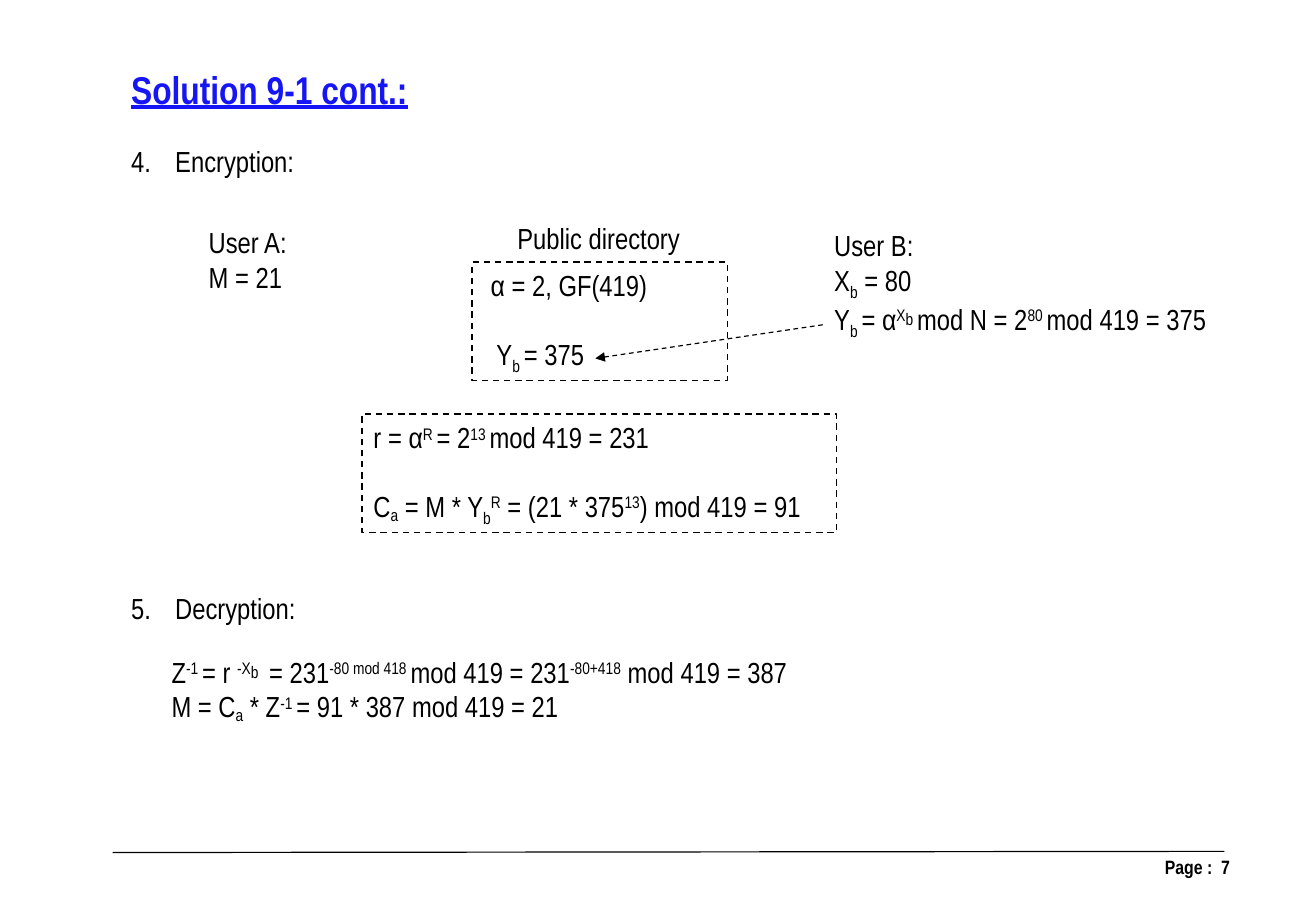
from lxml import etree
from pptx import Presentation
from pptx import util as u
from pptx.dml.color import RGBColor
from pptx.enum import dml, shapes, text
from pptx.oxml import ns

FONT = "Arial Narrow"
BLACK, BLUE, WHITE = "000000", "1515F5", "FFFFFF"
SUB, SUP = -25, 30
LOW, MID = -14, 16
LINE_GAP = 21


def colour(value):
    """Turn a hex string into a colour."""
    return RGBColor.from_string(value)


def place(shape, left, top, width, height):
    """Move and size a shape in inches."""
    shape.left, shape.top = u.Inches(left), u.Inches(top)
    shape.width, shape.height = u.Inches(width), u.Inches(height)


def write(shape, lines, size=18, color=BLACK, bold=False, underline=False,
          align=text.PP_ALIGN.LEFT, wrap=False, gap=0, indents=(), inset=0.1):
    """Write lines, each a string or a list of (text, baseline percent) runs."""
    frame = shape.text_frame
    frame.word_wrap = wrap
    frame.auto_size = text.MSO_AUTO_SIZE.NONE if wrap else text.MSO_AUTO_SIZE.SHAPE_TO_FIT_TEXT
    frame.vertical_anchor = text.MSO_ANCHOR.TOP
    frame.margin_left = frame.margin_right = u.Inches(inset)
    frame.margin_top = frame.margin_bottom = u.Inches(inset / 2)
    for index, line in enumerate(lines):
        paragraph = frame.paragraphs[0] if index == 0 else frame.add_paragraph()
        paragraph.alignment = align
        paragraph.space_before = u.Pt(gap if index else 0)
        if indents:
            paragraph._p.get_or_add_pPr().set("marL", str(u.Inches(indents[index])))
        for content, baseline in [(line, 0)] if isinstance(line, str) else line:
            run = paragraph.add_run()
            run.text = content
            font = run.font
            font.name, font.size = FONT, u.Pt(size)
            font.bold, font.underline = bold, underline
            font.color.rgb = colour(color)
            if baseline:
                run._r.get_or_add_rPr().set("baseline", str(baseline * 1000))


def add_label(slide, box, lines, **style):
    """Add a text box."""
    shape = slide.shapes.add_textbox(0, 0, 0, 0)
    place(shape, *box)
    write(shape, lines, **style)


def set_line(line, width, dashed):
    """Format a black outline or connector line."""
    line.color.rgb = colour(BLACK)
    line.width = u.Pt(width)
    if dashed:
        line.dash_style = dml.MSO_LINE.DASH


def add_dashed_box(slide, box, lines, fill=None, **style):
    """Add a dashed rectangle with left-aligned formulas."""
    shape = slide.shapes.add_shape(shapes.MSO_SHAPE.RECTANGLE, 0, 0, 0, 0)
    place(shape, *box)
    shape.shadow.inherit = False
    if fill:
        shape.fill.solid()
        shape.fill.fore_color.rgb = colour(fill)
    else:
        shape.fill.background()
    set_line(shape.line, 1, True)
    write(shape, lines, wrap=True, gap=LINE_GAP, **style)


def add_line(slide, start, end, dashed=False, arrow=False):
    """Add a straight line, optionally dashed or with an arrowhead."""
    points = [u.Inches(value) for value in (*start, *end)]
    line = slide.shapes.add_connector(shapes.MSO_CONNECTOR.STRAIGHT, *points)
    set_line(line.line, 0.75, dashed)
    if arrow:
        etree.SubElement(line.line._get_or_add_ln(), ns.qn("a:tailEnd"), type="triangle")
    etree.SubElement(line._element.spPr, ns.qn("a:effectLst"))


def fill_step(placeholder, box, number, name):
    """Turn a body placeholder into a numbered step heading."""
    place(placeholder, *box)
    write(placeholder, [name])
    properties = placeholder.text_frame.paragraphs[0]._p.get_or_add_pPr()
    properties.set("marL", str(u.Inches(0.38)))
    properties.set("indent", str(u.Inches(-0.38)))
    etree.SubElement(properties, ns.qn("a:buFont"), typeface=FONT)
    etree.SubElement(properties, ns.qn("a:buAutoNum"), type="arabicPeriod", startAt=str(number))


def main():
    """Build the slide."""
    presentation = Presentation()
    presentation.slide_width = u.Inches(11.34)
    presentation.slide_height = u.Inches(7.88)
    slide = presentation.slides.add_slide(presentation.slide_layouts[3])
    title, encryption, decryption = slide.placeholders

    add_label(slide, (8.14, 7.31, 2.58, 0.52), ["Page :  7"], size=12, bold=True,
              align=text.PP_ALIGN.RIGHT, wrap=True, inset=0.12)
    add_line(slide, (0.97, 7.35), (10.55, 7.34))

    place(title, 1.03, 0.52, 2.61, 0.5)
    write(title, ["Solution 9-1 cont.:"], size=24, color=BLUE, bold=True, underline=True)
    fill_step(encryption, (1.03, 1.19, 1.62, 0.4), 4, "Encryption:")
    fill_step(decryption, (1.03, 5.04, 1.63, 0.4), 5, "Decryption:")

    add_label(slide, (1.7, 1.89, 0.95, 0.71), ["User A:", "M = 21"])
    add_label(slide, (7.09, 1.91, 3.54, 1.02), [
        "User B:",
        [("X", 0), ("b", SUB), (" = 80", 0)],
        [("Y", 0), ("b ", SUB), ("= α", 0), ("X", SUP), ("b ", MID),
         ("mod N = 2", 0), ("80 ", SUP), ("mod 419 = 375", 0)],
    ])
    add_label(slide, (4.36, 1.85, 1.62, 0.4), ["Public directory"])
    add_dashed_box(slide, (4.07, 2.26, 2.2, 1.02), [
        "α = 2, GF(419)",
        [("Y", 0), ("b ", SUB), ("= 375", 0)],
    ], indents=(0.06, 0.11))
    add_dashed_box(slide, (3.12, 3.57, 4.09, 1.02), [
        [("r = α", 0), ("R ", SUP), ("= 2", 0), ("13 ", SUP), ("mod 419 = 231", 0)],
        [("C", 0), ("a", LOW), (" = M * Y", 0), ("b", SUB), ("R", SUP),
         (" = (21 * 375", 0), ("13", SUP), (") mod 419 = 91", 0)],
    ], fill=WHITE)
    add_line(slide, (7.09, 2.8), (5.13, 3.09), dashed=True, arrow=True)

    add_label(slide, (1.38, 5.59, 5.83, 0.71), [
        [("Z", 0), ("-1 ", SUP), ("= r ", 0), ("-X", SUP), ("b ", MID), (" = 231", 0),
         ("-80 mod 418 ", SUP), ("mod 419 = 231", 0), ("-80+418", SUP),
         (" mod 419 = 387", 0)],
        [("M = C", 0), ("a", LOW), (" * Z", 0), ("-1 ", SUP),
         ("= 91 * 387 mod 419 = 21", 0)],
    ])
    presentation.save("out.pptx")


if __name__ == "__main__":
    main()
